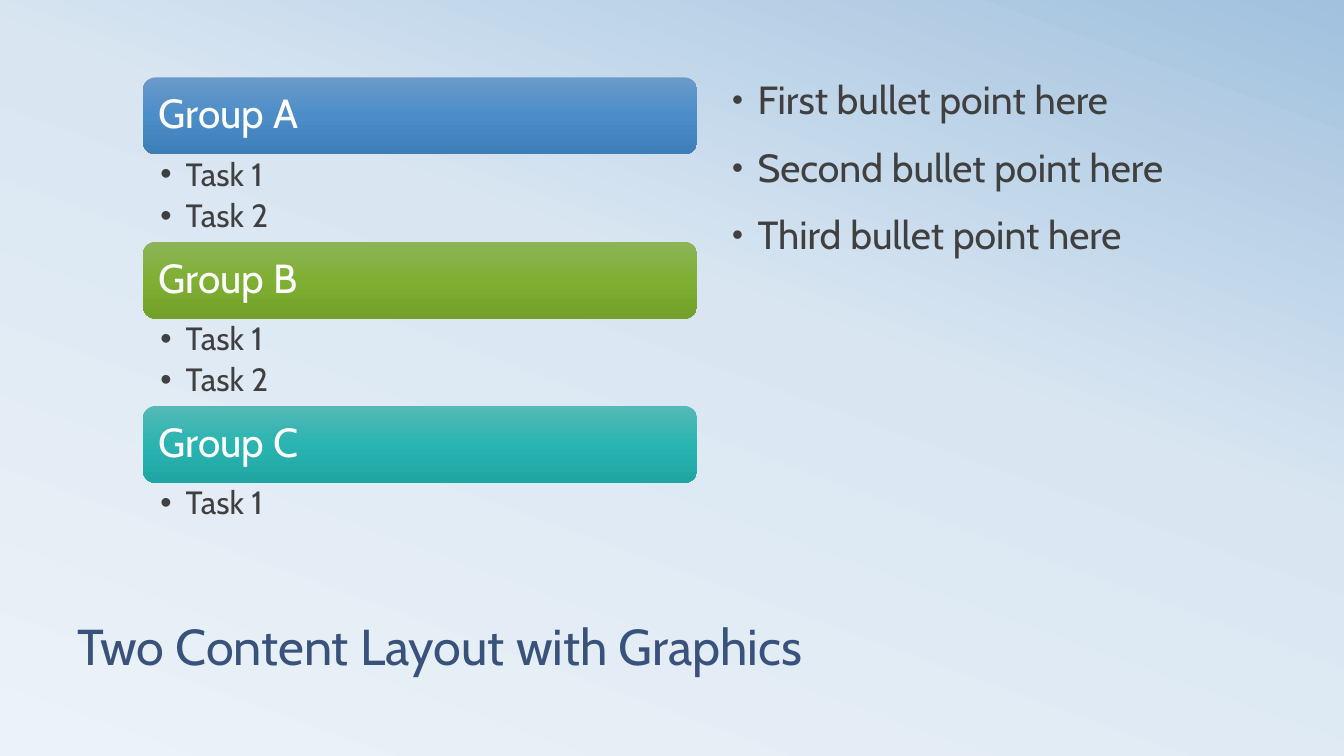
from lxml import etree
from pptx import Presentation
from pptx.dml.color import RGBColor
from pptx.enum.shapes import MSO_SHAPE
from pptx.enum.text import MSO_ANCHOR, MSO_AUTO_SIZE, PP_ALIGN
from pptx.oxml.ns import qn
from pptx.util import Cm, Pt

ROUNDED = MSO_SHAPE.ROUNDED_RECTANGLE
TOP, MIDDLE, BOTTOM = MSO_ANCHOR.TOP, MSO_ANCHOR.MIDDLE, MSO_ANCHOR.BOTTOM
LEFT = PP_ALIGN.LEFT
NO_AUTOFIT = MSO_AUTO_SIZE.NONE

TITLE = "Two Content Layout with Graphics"
POINTS = ["First bullet point here", "Second bullet point here", "Third bullet point here"]
GROUPS = [
    ("Group A", ["Task 1", "Task 2"], ("6A9AC9", "4C8DC8", "3E7EB8")),
    ("Group B", ["Task 1", "Task 2"], ("8DB459", "7FAF33", "72A029")),
    ("Group C", ["Task 1"], ("55B9B6", "2AB4B1", "1FA6A3")),
]
BACKDROP = [(0, "ECF3F8"), (58, "D9E6F2"), (100, "A1C1DE")]
FONT = "Cabin"
NAVY, GREY, WHITE = "39527B", "404040", "FFFFFF"

GROUP_LEFT, GROUP_TOP, GROUP_WIDTH = 3.6, 1.95, 13.97
BAR_HEIGHT = 1.94
TASK_HEIGHT, TASK_PADDING = 0.85, 0.5
HANGING = 0.64


def color(value):
    return RGBColor.from_string(value)


def add_gradient(fill, owner, stops, angle):
    fill.gradient()
    gradient = owner.find(".//" + qn("a:gradFill"))
    stop_list = gradient.find(qn("a:gsLst"))
    for old_stop in list(stop_list):
        stop_list.remove(old_stop)
    for position, value in stops:
        stop = etree.SubElement(stop_list, qn("a:gs"), pos=str(position * 1000))
        etree.SubElement(stop, qn("a:srgbClr"), val=value)
    direction = gradient.find(qn("a:lin"))
    direction.set("ang", str(angle * 60000))
    direction.set("scaled", "0")


def add_bullet(paragraph, percent):
    properties = paragraph._p.get_or_add_pPr()
    properties.set("marL", str(Cm(HANGING)))
    properties.set("indent", str(-Cm(HANGING)))
    bullet_color = etree.SubElement(properties, qn("a:buClr"))
    etree.SubElement(bullet_color, qn("a:srgbClr"), val=GREY)
    etree.SubElement(properties, qn("a:buSzPct"), val=str(percent * 1000))
    etree.SubElement(properties, qn("a:buFont"), typeface="Arial")
    etree.SubElement(properties, qn("a:buChar"), char="•")


def write(shape, lines, size, ink, spacing=0.9, before=0, after=0,
          anchor=TOP, margins=(0.25, 0.13, 0.25, 0.13), bullet=None):
    frame = shape.text_frame
    frame.word_wrap = True
    frame.auto_size = NO_AUTOFIT
    frame.vertical_anchor = anchor
    frame.margin_left, frame.margin_top, frame.margin_right, frame.margin_bottom = map(Cm, margins)
    frame.text = "\n".join(lines)
    for paragraph in frame.paragraphs:
        paragraph.alignment = LEFT
        paragraph.line_spacing = spacing
        paragraph.space_before = Pt(before)
        paragraph.space_after = Pt(after)
        if bullet:
            add_bullet(paragraph, bullet)
        paragraph.font.name = FONT
        paragraph.font.size = Pt(size)
        paragraph.font.color.rgb = color(ink)


def place(shape, left, top, width, height):
    shape.left, shape.top, shape.width, shape.height = map(Cm, (left, top, width, height))


def add_group(slide, top, name, tasks, shades):
    bar = slide.shapes.add_shape(
        ROUNDED, Cm(GROUP_LEFT), Cm(top), Cm(GROUP_WIDTH), Cm(BAR_HEIGHT))
    bar.shadow.inherit = False
    bar.line.fill.background()
    add_gradient(bar.fill, bar._element, list(zip((0, 50, 100), shades)), 90)
    write(bar, [name], 29, WHITE, anchor=MIDDLE, margins=(0.3, 0.3, 0.3, 0.3))

    tasks_top = top + BAR_HEIGHT
    tasks_height = TASK_PADDING + TASK_HEIGHT * len(tasks)
    task_list = slide.shapes.add_textbox(
        Cm(GROUP_LEFT), Cm(tasks_top), Cm(GROUP_WIDTH), Cm(tasks_height))
    write(task_list, tasks, 23, GREY, after=4.6, margins=(0.44, 0.1, 0.58, 0.1), bullet=100)
    return tasks_top + tasks_height


def main():
    deck = Presentation()
    deck.slide_width, deck.slide_height = Cm(33.87), Cm(19.05)
    slide = deck.slides.add_slide(deck.slide_layouts[1])
    add_gradient(slide.background.fill, slide._element, BACKDROP, 290)

    title = slide.shapes.title
    place(title, 1.7, 14.17, 30.48, 2.97)
    write(title, [TITLE], 36, NAVY, spacing=0.8, anchor=BOTTOM)

    points = slide.placeholders[1]
    place(points, 18.2, 1.91, 13.97, 11.63)
    write(points, POINTS, 28, GREY, before=18, bullet=80)

    top = GROUP_TOP
    for name, tasks, shades in GROUPS:
        top = add_group(slide, top, name, tasks, shades)

    deck.save("out.pptx")


if __name__ == "__main__":
    main()
